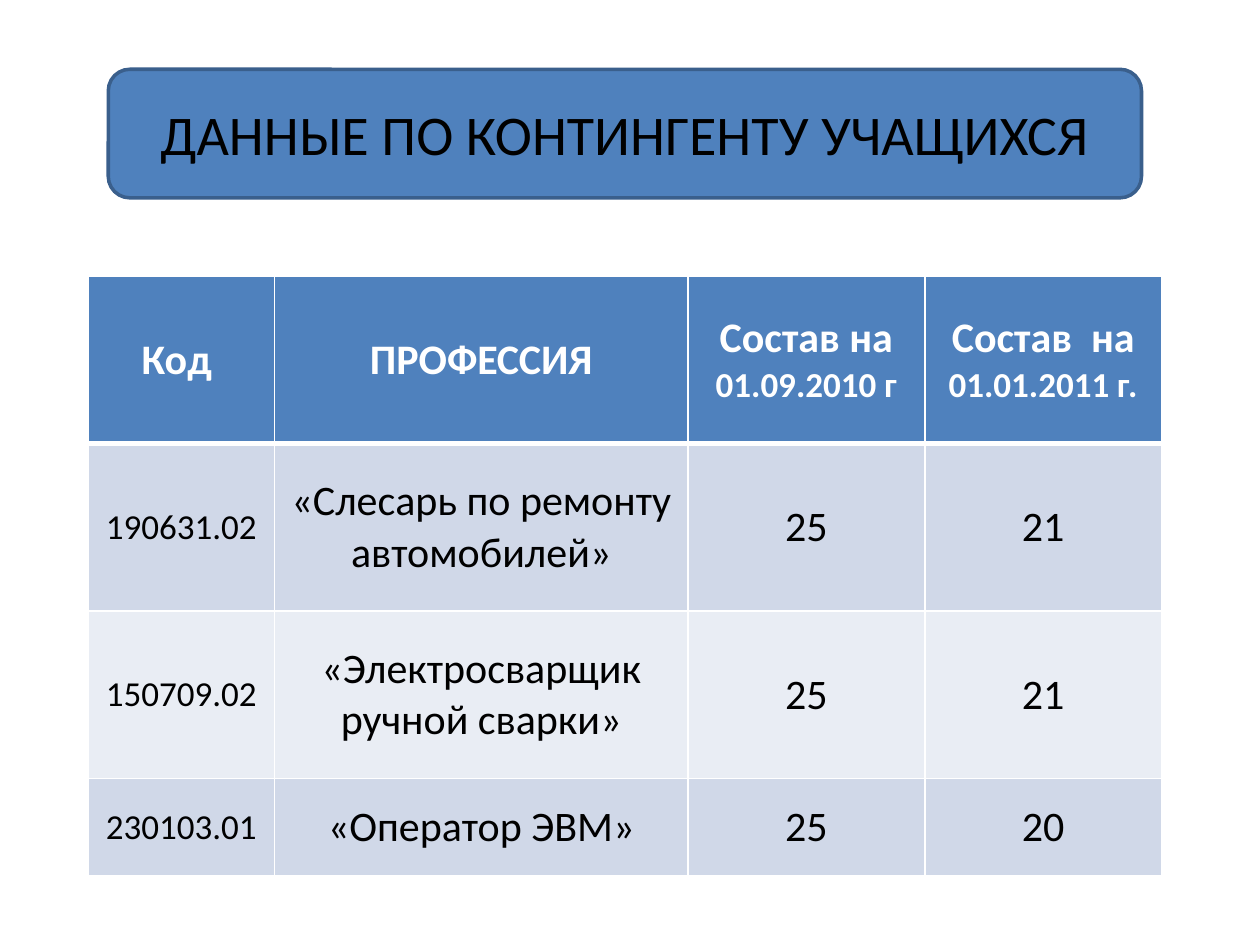
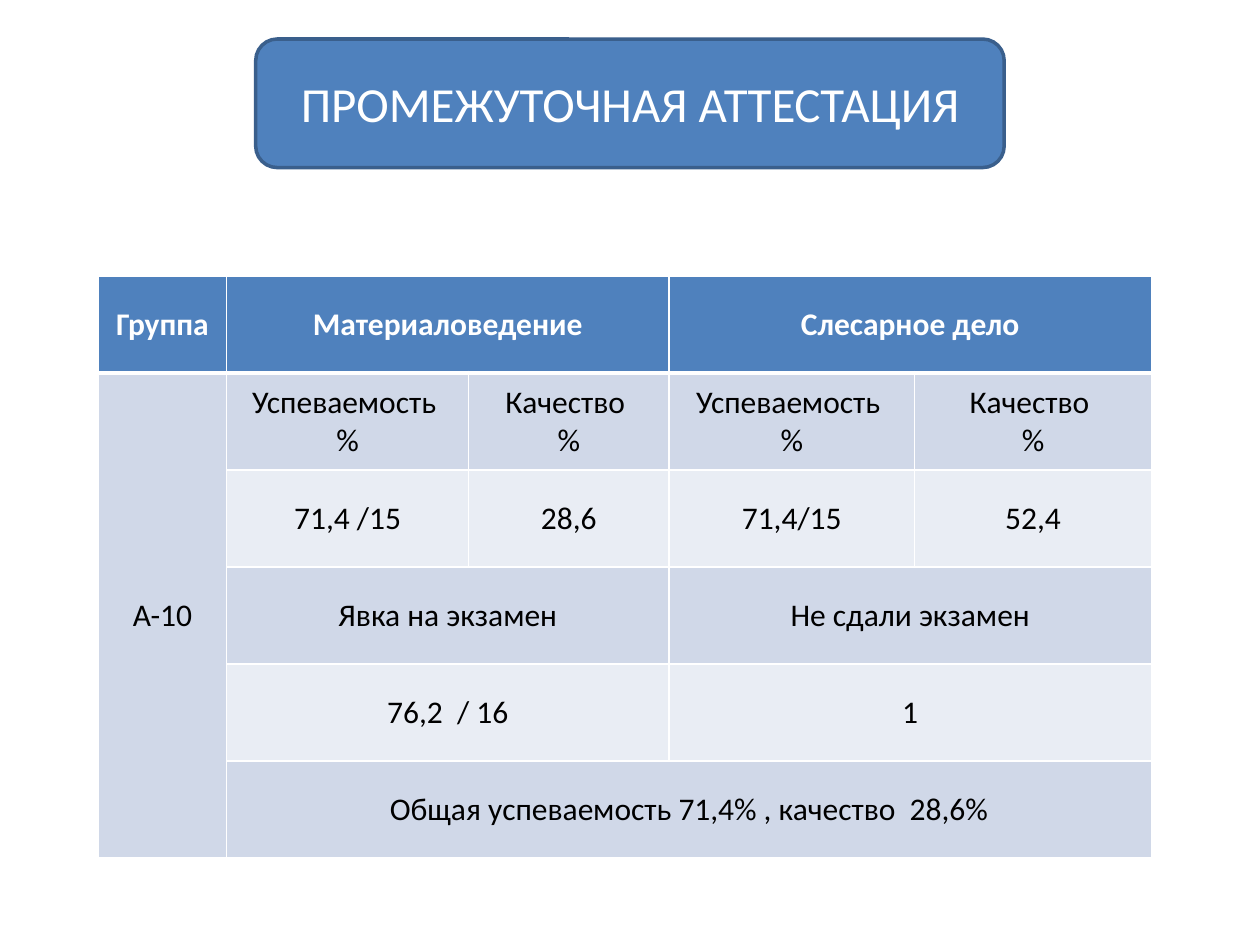
import pptx
import pptx.dml.color
import pptx.enum.shapes
import pptx.enum.text
import pptx.oxml.ns
import pptx.util
from lxml import etree

Inches = pptx.util.Inches
Pt = pptx.util.Pt


def rgb(value):
    return pptx.dml.color.RGBColor.from_string(value)


class Deck:
    FONT = "Calibri"
    BLUE = "4F81BD"
    OUTLINE = "3A5F8C"
    BANDS = ("E9EDF4", "D0D8E8")
    BLACK = "000000"
    WHITE = "FFFFFF"
    BAND_HEIGHT = 1.02
    TABLE_TOP = 2.19

    def __init__(self):
        self.presentation = pptx.Presentation()
        self.presentation.slide_width = Inches(10)
        self.presentation.slide_height = Inches(7.5)
        self.slide = None

    def add_slide(self):
        layout = self.presentation.slide_layouts[5]
        self.slide = self.presentation.slides.add_slide(layout)

    def style(self, paragraph, size, color, bold=False):
        paragraph.alignment = pptx.enum.text.PP_ALIGN.CENTER
        paragraph.font.name = self.FONT
        paragraph.font.size = Pt(size)
        paragraph.font.bold = bold
        paragraph.font.color.rgb = rgb(color)

    def title(self, text, left, top, width, size, color):
        place = [Inches(length) for length in (left, top, width, self.BAND_HEIGHT)]
        band = self.slide.shapes.add_shape(
            pptx.enum.shapes.MSO_SHAPE.ROUNDED_RECTANGLE, *place)
        band.shadow.inherit = False
        band.fill.solid()
        band.fill.fore_color.rgb = rgb(self.BLUE)
        band.line.color.rgb = rgb(self.OUTLINE)
        band.line.width = Pt(2)

        heading = self.slide.shapes.title
        heading.left, heading.top, heading.width, heading.height = place
        band.element.addnext(heading.element)
        frame = heading.text_frame
        frame.text = text
        frame.word_wrap = True
        frame.auto_size = pptx.enum.text.MSO_AUTO_SIZE.NONE
        frame.vertical_anchor = pptx.enum.text.MSO_ANCHOR.MIDDLE
        self.style(frame.paragraphs[0], size, color)

    def borders(self, cell, row):
        properties = cell._tc.get_or_add_tcPr()
        widths = {"L": 1, "R": 1, "T": 3 if row == 1 else 1, "B": 3 if row == 0 else 1}
        for side, width in widths.items():
            line = etree.SubElement(properties, pptx.oxml.ns.qn(f"a:ln{side}"), w=str(Pt(width)))
            fill = etree.SubElement(line, pptx.oxml.ns.qn("a:solidFill"))
            etree.SubElement(fill, pptx.oxml.ns.qn("a:srgbClr"), val=self.WHITE)

    def cell_text(self, cell, content, size, header):
        color = self.WHITE if header else self.BLACK
        if isinstance(content, tuple):
            label, date = content
            paragraph = cell.text_frame.paragraphs[0]
            paragraph.add_run().text = label
            date_run = paragraph.add_run()
            date_run.text = date
            date_run.font.size = Pt(20)
        else:
            cell.text = content
        for paragraph in cell.text_frame.paragraphs:
            self.style(paragraph, size, color, header)

    def table(self, left, widths, heights, rows, header_size, body_sizes, spans=()):
        table = self.slide.shapes.add_table(
            len(heights), len(widths), Inches(left), Inches(self.TABLE_TOP),
            Inches(sum(widths)), Inches(sum(heights))).table
        for column, width in zip(table.columns, widths):
            column.width = Inches(width)
        for row, height in zip(table.rows, heights):
            row.height = Inches(height)
        for top, start, bottom, end in spans:
            table.cell(top, start).merge(table.cell(bottom, end))
        for r, contents in enumerate(rows):
            header = r == 0
            for c, content in enumerate(contents):
                cell = table.cell(r, c)
                self.borders(cell, r)
                cell.fill.solid()
                cell.fill.fore_color.rgb = rgb(self.BLUE if header else self.BANDS[r % 2])
                cell.vertical_anchor = pptx.enum.text.MSO_ANCHOR.MIDDLE
                if content:
                    self.cell_text(cell, content, header_size if header else body_sizes[c], header)


def enrolment(deck):
    deck.add_slide()
    deck.title("ДАННЫЕ ПО КОНТИНГЕНТУ УЧАЩИХСЯ", 0.86, 0.55, 8.2, 32, deck.BLACK)
    professions = [
        ["Код ", "ПРОФЕССИЯ", ("Состав на ", "01.09.2010 г"), ("Состав  на ", "01.01.2011 г.")],
        ["190631.02", "«Слесарь по ремонту автомобилей»", "25", "21"],
        ["150709.02", "«Электросварщик ручной сварки»", "25", "21"],
        ["230103.01", "«Оператор ЭВМ»", "25", "20"],
    ]
    deck.table(0.7, [1.48, 3.28, 1.88, 1.88], [1.33] * 3 + [0.77],
               professions, 24, [20, 24, 24, 24])


def assessment(deck):
    deck.add_slide()
    deck.title("ПРОМЕЖУТОЧНАЯ АТТЕСТАЦИЯ", 2.03, 0.31, 5.94, 28, deck.WHITE)
    results = [
        ["Группа", "Материаловедение", "", "Слесарное дело", ""],
        ["А-10"] + ["Успеваемость \n%", "Качество \n%"] * 2,
        ["", "71,4 /15", "28,6", "71,4/15", "52,4"],
        ["", "Явка на экзамен", "", "Не сдали экзамен", ""],
        ["", "76,2  / 16", "", "1", ""],
        ["", "Общая успеваемость 71,4% , качество  28,6%", "", "", ""],
    ]
    subject_pairs = [(row, start, row, start + 1) for row in (0, 3, 4) for start in (1, 3)]
    deck.table(0.78, [1.02, 1.92, 1.59, 1.95, 1.88], [0.77] * 6,
               results, 18, [18] * 5, subject_pairs + [(1, 0, 5, 0), (5, 1, 5, 4)])


def main():
    deck = Deck()
    enrolment(deck)
    assessment(deck)
    deck.presentation.save("out.pptx")


if __name__ == "__main__":
    main()
